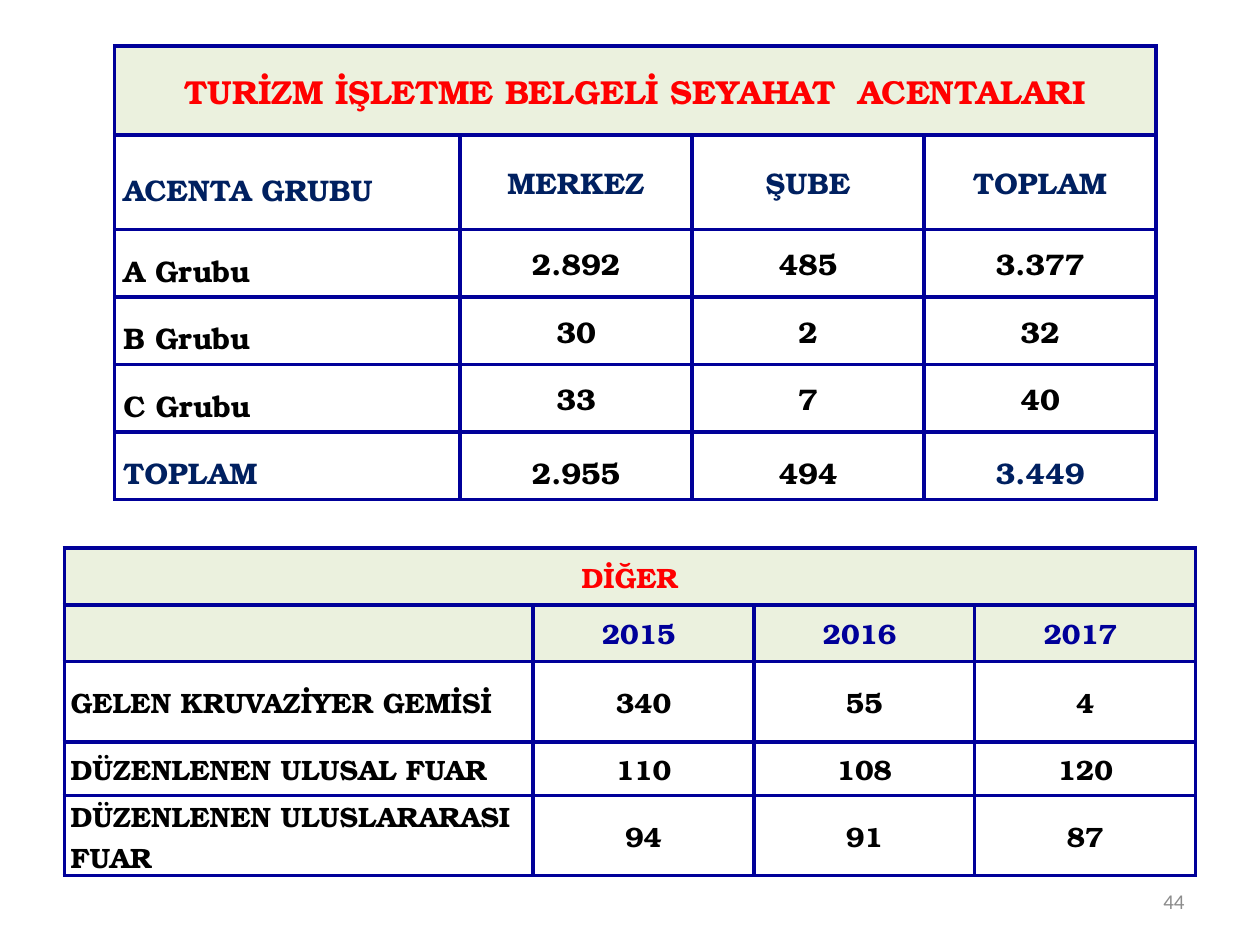
from dataclasses import dataclass

import lxml.etree
import pptx
import pptx.dml.color
import pptx.enum.text
import pptx.oxml.ns
import pptx.util

Pt = pptx.util.Pt
RGBColor = pptx.dml.color.RGBColor
ALIGN = pptx.enum.text.PP_ALIGN
MIDDLE = pptx.enum.text.MSO_ANCHOR.MIDDLE

RED = RGBColor(0xFF, 0x00, 0x00)
NAVY = RGBColor(0x00, 0x20, 0x60)
BLUE = RGBColor(0x00, 0x00, 0x99)
BLACK = RGBColor(0x00, 0x00, 0x00)
GRAY = RGBColor(0x8C, 0x8C, 0x8C)
WHITE = RGBColor(0xFF, 0xFF, 0xFF)
PALE_GREEN = RGBColor(0xEB, 0xF1, 0xDE)

TABLE_FONT = "TeX Gyre Bonum"
BORDER_WIDTH = 2.25
LOOSE = 1.3


@dataclass(frozen=True)
class Row:
    height: float
    texts: tuple[str, ...]
    colors: tuple[RGBColor, ...]
    fill: RGBColor = WHITE
    label_spacing: float | None = None
    value_spacing: float | None = None
    label_inset: float = 3.6
    value_inset: float = 3.6


@dataclass(frozen=True)
class TitledTable:
    left: float
    top: float
    label_width: float
    value_width: float
    title: str
    title_size: float
    title_height: float
    size: float
    rows: tuple[Row, ...]


def agency_row(height: float, texts: tuple[str, ...], colors: tuple[RGBColor, ...],
               value_spacing: float | None = None) -> Row:
    return Row(height, texts, colors, label_spacing=LOOSE, value_spacing=value_spacing,
               label_inset=5.04, value_inset=5.04)


AGENCIES = TitledTable(
    65.5, 26.2, 197.4, 132.6, "TURİZM İŞLETME BELGELİ SEYAHAT  ACENTALARI", 19, 51, 17,
    (
        agency_row(53.9, ("ACENTA GRUBU", "MERKEZ", "ŞUBE", "TOPLAM"), (NAVY,) * 4),
        agency_row(38.6, ("A Grubu", "2.892", "485", "3.377"), (BLACK,) * 4),
        agency_row(38.6, ("B Grubu", "30", "2", "32"), (BLACK,) * 4),
        agency_row(38.6, ("C Grubu", "33", "7", "40"), (BLACK,) * 4),
        agency_row(38.6, ("TOPLAM", "2.955", "494", "3.449"), (NAVY, BLACK, BLACK, NAVY), LOOSE),
    ),
)

OTHERS = TitledTable(
    36.8, 313.2, 267.8, 126.2, "DİĞER", 16, 32.4, 16,
    (
        Row(32.4, ("", "2015 ", "2016 ", "2017 "), (BLUE,) * 4, PALE_GREEN),
        Row(46, ("GELEN KRUVAZİYER GEMİSİ", "340", "55", "4"), (BLACK,) * 4),
        Row(30.5, ("DÜZENLENEN ULUSAL FUAR", "110", "108", "120"), (BLACK,) * 4,
            value_inset=5.04),
        Row(46, ("DÜZENLENEN ULUSLARARASI FUAR", "94", "91", "87"), (BLACK,) * 4,
            value_inset=5.04),
    ),
)


def add_borders(cell) -> None:
    """Draw all four sides; the lines must precede the fill in tcPr."""
    properties = cell._tc.get_or_add_tcPr()
    qn = pptx.oxml.ns.qn
    for position, side in enumerate(("a:lnL", "a:lnR", "a:lnT", "a:lnB")):
        line = lxml.etree.Element(qn(side), w=str(int(Pt(BORDER_WIDTH))))
        solid = lxml.etree.SubElement(line, qn("a:solidFill"))
        lxml.etree.SubElement(solid, qn("a:srgbClr"), val=str(BLUE))
        properties.insert(position, line)


def style_text(paragraph, text: str, font_name: str, size: float, color: RGBColor,
               alignment, bold: bool = True) -> None:
    paragraph.text = text
    paragraph.alignment = alignment
    paragraph.font.name = font_name
    paragraph.font.size = Pt(size)
    paragraph.font.bold = bold
    paragraph.font.color.rgb = color


def fill_cell(cell, text: str, size: float, color: RGBColor, fill: RGBColor, alignment,
              inset: float, spacing: float | None = None) -> None:
    cell.fill.solid()
    cell.fill.fore_color.rgb = fill
    add_borders(cell)
    cell.vertical_anchor = MIDDLE
    cell.margin_left = cell.margin_right = Pt(inset)
    cell.margin_top = cell.margin_bottom = Pt(0)
    paragraph = cell.text_frame.paragraphs[0]
    style_text(paragraph, text, TABLE_FONT, size, color, alignment)
    if spacing:
        paragraph.line_spacing = spacing


def draw_table(slide, content: TitledTable) -> None:
    widths = [content.label_width] + [content.value_width] * 3
    heights = [content.title_height] + [row.height for row in content.rows]
    table = slide.shapes.add_table(
        len(heights), len(widths), Pt(content.left), Pt(content.top),
        Pt(sum(widths)), Pt(sum(heights))).table
    for column, width in zip(table.columns, widths):
        column.width = Pt(width)
    for table_row, height in zip(table.rows, heights):
        table_row.height = Pt(height)

    for column_index in range(len(widths)):
        title = content.title if column_index == 0 else ""
        fill_cell(table.cell(0, column_index), title, content.title_size, RED,
                  PALE_GREEN, ALIGN.CENTER, 3.6)
    table.cell(0, 0).merge(table.cell(0, len(widths) - 1))

    for row_index, row in enumerate(content.rows, start=1):
        for column_index, (text, color) in enumerate(zip(row.texts, row.colors)):
            if column_index == 0:
                layout = (ALIGN.LEFT, row.label_inset, row.label_spacing)
            else:
                layout = (ALIGN.CENTER, row.value_inset, row.value_spacing)
            fill_cell(table.cell(row_index, column_index), text, content.size, color,
                      row.fill, *layout)


def draw_page_number(slide, number: str) -> None:
    frame = slide.shapes.add_textbox(Pt(516), Pt(500.5), Pt(168), Pt(28.75)).text_frame
    frame.word_wrap = True
    frame.vertical_anchor = MIDDLE
    style_text(frame.paragraphs[0], number, "Calibri", 12, GRAY, ALIGN.RIGHT, bold=False)


def main() -> None:
    presentation = pptx.Presentation()
    presentation.slide_width, presentation.slide_height = Pt(720), Pt(540)
    slide = presentation.slides.add_slide(presentation.slide_layouts[6])
    draw_page_number(slide, "44")
    for content in (AGENCIES, OTHERS):
        draw_table(slide, content)
    presentation.save("out.pptx")


if __name__ == "__main__":
    main()
